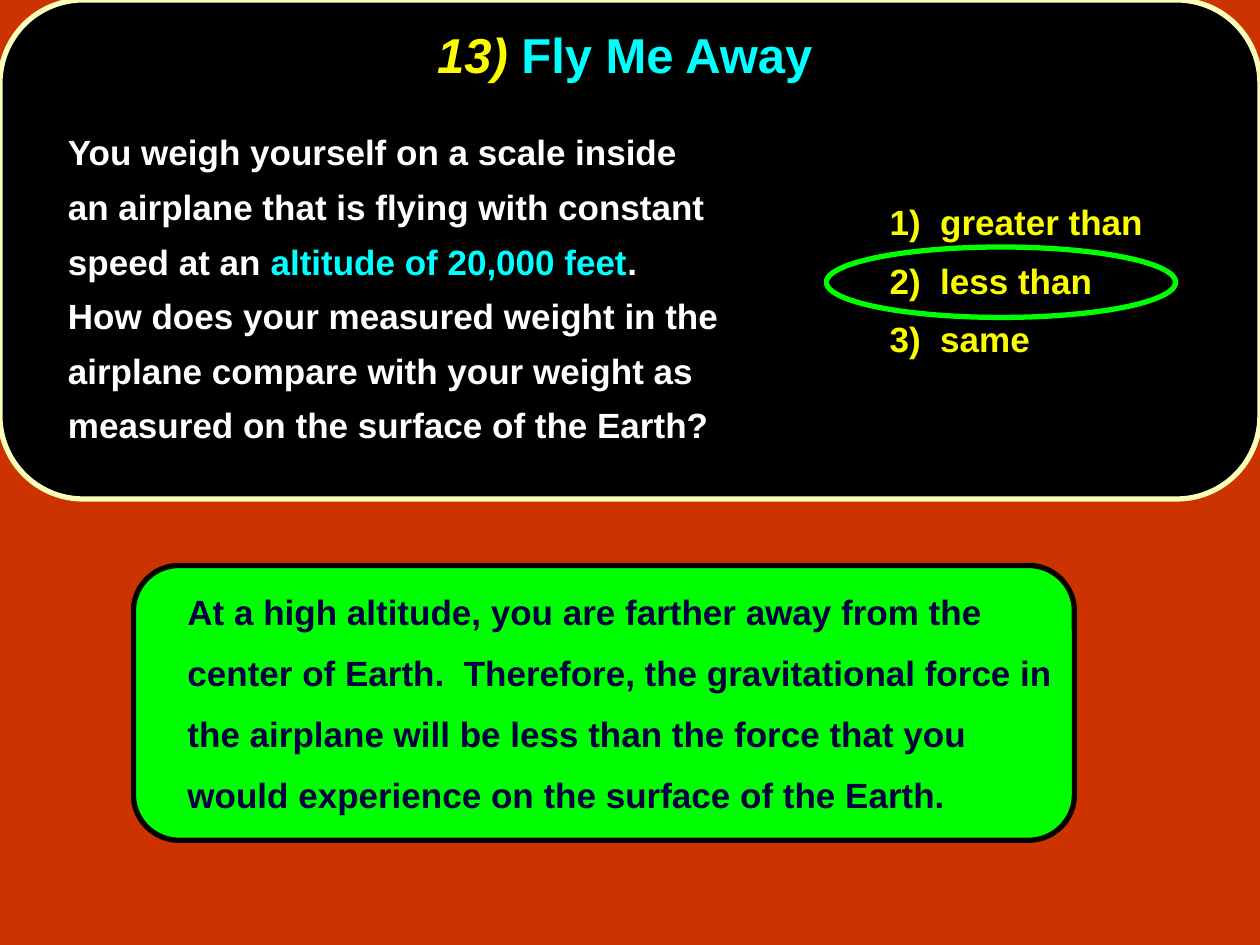
from lxml.etree import SubElement
from pptx import Presentation
from pptx.dml.color import RGBColor
from pptx.enum.shapes import MSO_SHAPE
from pptx.enum.text import MSO_ANCHOR, MSO_AUTO_SIZE, PP_ALIGN
from pptx.oxml.ns import qn
from pptx.util import Cm, Pt

RUST = RGBColor(0xCC, 0x33, 0x00)
BLACK = RGBColor(0x00, 0x00, 0x00)
WHITE = RGBColor(0xFF, 0xFF, 0xFF)
GREEN = RGBColor(0x00, 0xFF, 0x00)
CREAM = RGBColor(0xFC, 0xFE, 0xB9)
CYAN = RGBColor(0x00, 0xFF, 0xFF)
YELLOW = RGBColor(0xFA, 0xFD, 0x00)
NAVY = RGBColor(0x00, 0x00, 0x40)

FONT = "Arial"
TEXT_INDENT = Cm(1.12)


def add_outlined_shape(page, preset, place, line_color, fill_color=None):
    shape = page.shapes.add_shape(preset, *map(Cm, place))
    shape.shadow.inherit = False
    if fill_color is None:
        shape.fill.background()
    else:
        shape.fill.solid()
        shape.fill.fore_color.rgb = fill_color
    shape.line.color.rgb = line_color
    shape.line.width = Pt(3)
    return shape


def place_placeholder(page, holder, place):
    """Move a placeholder to its place and in front of the shapes drawn so far."""
    holder.left, holder.top, holder.width, holder.height = map(Cm, place)
    page.shapes.element.append(holder.element)
    holder.text_frame.auto_size = MSO_AUTO_SIZE.NONE
    return holder


def add_run(paragraph, text, color, size=20, italic=False):
    span = paragraph.add_run()
    span.text = text
    span.font.name = FONT
    span.font.size = Pt(size)
    span.font.bold = True
    span.font.italic = italic
    span.font.color.rgb = color


def format_body(paragraph, line_spacing):
    """Indent the whole paragraph and drop its bullet."""
    paragraph.line_spacing = line_spacing
    paragraph.space_before = Pt(7)
    properties = paragraph._p.get_or_add_pPr()
    properties.set("marL", str(TEXT_INDENT))
    properties.set("indent", "0")
    SubElement(properties, qn("a:buNone"))


def add_paragraph_box(page, place, line_spacing, runs):
    box = page.shapes.add_textbox(*map(Cm, place))
    box.text_frame.word_wrap = True
    paragraph = box.text_frame.paragraphs[0]
    format_body(paragraph, line_spacing)
    for text, color in runs:
        add_run(paragraph, text, color)


def fill_title(page, place):
    title = place_placeholder(page, page.shapes.title, place)
    title.text_frame.vertical_anchor = MSO_ANCHOR.MIDDLE
    paragraph = title.text_frame.paragraphs[0]
    paragraph.alignment = PP_ALIGN.CENTER
    paragraph.line_spacing = 0.9
    add_run(paragraph, "13) ", YELLOW, size=28, italic=True)
    add_run(paragraph, "Fly Me Away", CYAN, size=28)


def fill_answers(page, place, answers):
    frame = place_placeholder(page, page.placeholders[1], place).text_frame
    frame.vertical_anchor = MSO_ANCHOR.TOP
    for number, answer in enumerate(answers, start=1):
        paragraph = frame.paragraphs[0] if number == 1 else frame.add_paragraph()
        format_body(paragraph, 1.1)
        add_run(paragraph, f"{number})  {answer}", YELLOW)


def main():
    deck = Presentation()
    deck.slide_width, deck.slide_height = Cm(25.4), Cm(19.05)
    page = deck.slides.add_slide(deck.slide_layouts[1])
    page.background.fill.solid()
    page.background.fill.fore_color.rgb = RUST

    add_outlined_shape(page, MSO_SHAPE.ROUNDED_RECTANGLE,
                       (2.69, 11.4, 18.97, 5.54), BLACK, GREEN)
    add_outlined_shape(page, MSO_SHAPE.ROUNDED_RECTANGLE,
                       (0, 0, 25.4, 10.06), CREAM, BLACK)

    add_paragraph_box(page, (0, 2.26, 14.81, 7.09), 1.3, [
        ("You weigh yourself on a scale inside an airplane that is flying "
         "with constant speed at an ", WHITE),
        ("altitude of 20,000 feet", CYAN),
        (".  How does your measured weight in the airplane compare with your "
         "weight as measured on the surface of the Earth?", WHITE),
    ])
    fill_answers(page, (16.56, 3.84, 7.37, 4.17),
                 ["greater than", "less than", "same"])
    add_paragraph_box(page, (2.41, 11.4, 19.25, 5.21), 1.45, [
        ("At a high altitude, you are farther away from the center of Earth.  "
         "Therefore, the gravitational force in the airplane will be less "
         "than the force that you would experience on the surface of the "
         "Earth.", NAVY),
    ])

    add_outlined_shape(page, MSO_SHAPE.OVAL, (16.66, 4.98, 7.04, 1.42), GREEN)
    fill_title(page, (2.46, 0, 20.27, 2.34))
    deck.save("out.pptx")


if __name__ == "__main__":
    main()
